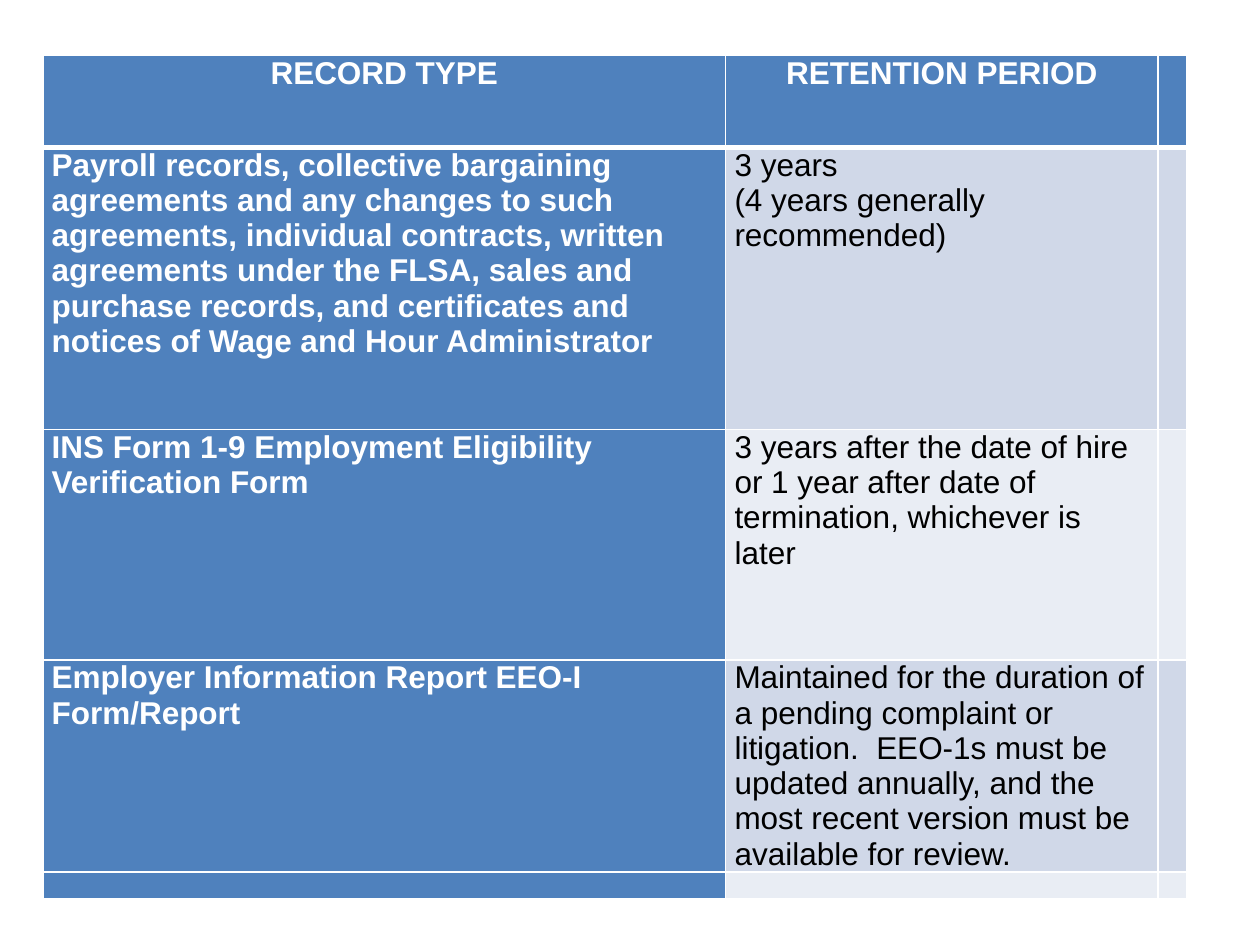
from lxml.etree import SubElement
from pptx import Presentation
from pptx.dml.color import RGBColor
from pptx.enum.text import MSO_ANCHOR, PP_ALIGN
from pptx.oxml.ns import qn
from pptx.util import Inches, Pt

COLORS = {
    "heading": "4F81BD",
    "band_dark": "D0D8E8",
    "band_light": "E9EDF4",
    "grid": "FFFFFF",
    "heading_text": "FFFFFF",
    "body_text": "000000",
}
COLUMN_WIDTHS = [5.42, 3.43, 0.23]
ROW_HEIGHTS = [0.73, 2.24, 1.83, 1.68, 0.21]
RECORDS = [
    ("RECORD TYPE", "RETENTION PERIOD", ""),
    ("Payroll records, collective bargaining agreements and any changes to "
     "such agreements, individual contracts, written agreements under the "
     "FLSA, sales and purchase records, and certificates and notices of Wage "
     "and Hour Administrator",
     "3 years\n(4 years generally recommended)", ""),
    ("INS Form 1-9 Employment Eligibility Verification Form",
     "3 years after the date of hire or 1 year after date of termination, "
     "whichever is later", ""),
    ("Employer Information Report EEO-I Form/Report",
     "Maintained for the duration of a pending complaint or litigation.  "
     "EEO-1s must be updated annually, and the most recent version must be "
     "available for review.", ""),
    ("", "", ""),
]


def rgb(name):
    return RGBColor.from_string(COLORS[name])


def set_borders(cell, top, bottom):
    """Draw white cell edges; top and bottom are widths in points."""
    properties = cell._tc.get_or_add_tcPr()
    for side, width in (("L", 1), ("R", 1), ("T", top), ("B", bottom)):
        edge = SubElement(properties, qn(f"a:ln{side}"), w=str(Pt(width)))
        fill = SubElement(edge, qn("a:solidFill"))
        SubElement(fill, qn("a:srgbClr"), val=COLORS["grid"])


def fill_cell(cell, color):
    cell.fill.solid()
    cell.fill.fore_color.rgb = rgb(color)


def write_cell(cell, text, is_heading, alignment):
    cell.margin_left = cell.margin_right = Inches(0.07)
    cell.margin_top = cell.margin_bottom = 0
    cell.vertical_anchor = MSO_ANCHOR.TOP
    cell.text_frame.text = text
    for paragraph in cell.text_frame.paragraphs:
        paragraph.alignment = alignment
        for run in paragraph.runs:
            run.font.name = "Arial"
            run.font.size = Pt(18)
            run.font.bold = is_heading
            run.font.color.rgb = rgb("heading_text" if is_heading else "body_text")
        if not paragraph.runs:
            # A small end mark keeps empty cells from stretching their row.
            SubElement(paragraph._p, qn("a:endParaRPr"), sz="1000")


def add_retention_table(slide):
    frame = slide.shapes.add_table(
        len(ROW_HEIGHTS), len(COLUMN_WIDTHS), Inches(0.34), Inches(0.44),
        Inches(sum(COLUMN_WIDTHS)), Inches(sum(ROW_HEIGHTS)))
    table = frame.table
    table.first_col = True
    for column, width in zip(table.columns, COLUMN_WIDTHS):
        column.width = Inches(width)
    for row, height in zip(table.rows, ROW_HEIGHTS):
        row.height = Inches(height)

    for r, record in enumerate(RECORDS):
        band = "band_dark" if r % 2 else "band_light"
        for c, text in enumerate(record):
            cell = table.cell(r, c)
            is_heading = r == 0 or c == 0
            set_borders(cell, top=3 if r == 1 else 1, bottom=3 if r == 0 else 1)
            fill_cell(cell, "heading" if is_heading else band)
            write_cell(cell, text, is_heading,
                       PP_ALIGN.CENTER if r == 0 else PP_ALIGN.LEFT)


def main():
    deck = Presentation()
    deck.slide_width, deck.slide_height = Inches(10), Inches(7.5)
    slide = deck.slides.add_slide(deck.slide_layouts[6])
    add_retention_table(slide)
    deck.save("out.pptx")


if __name__ == "__main__":
    main()
